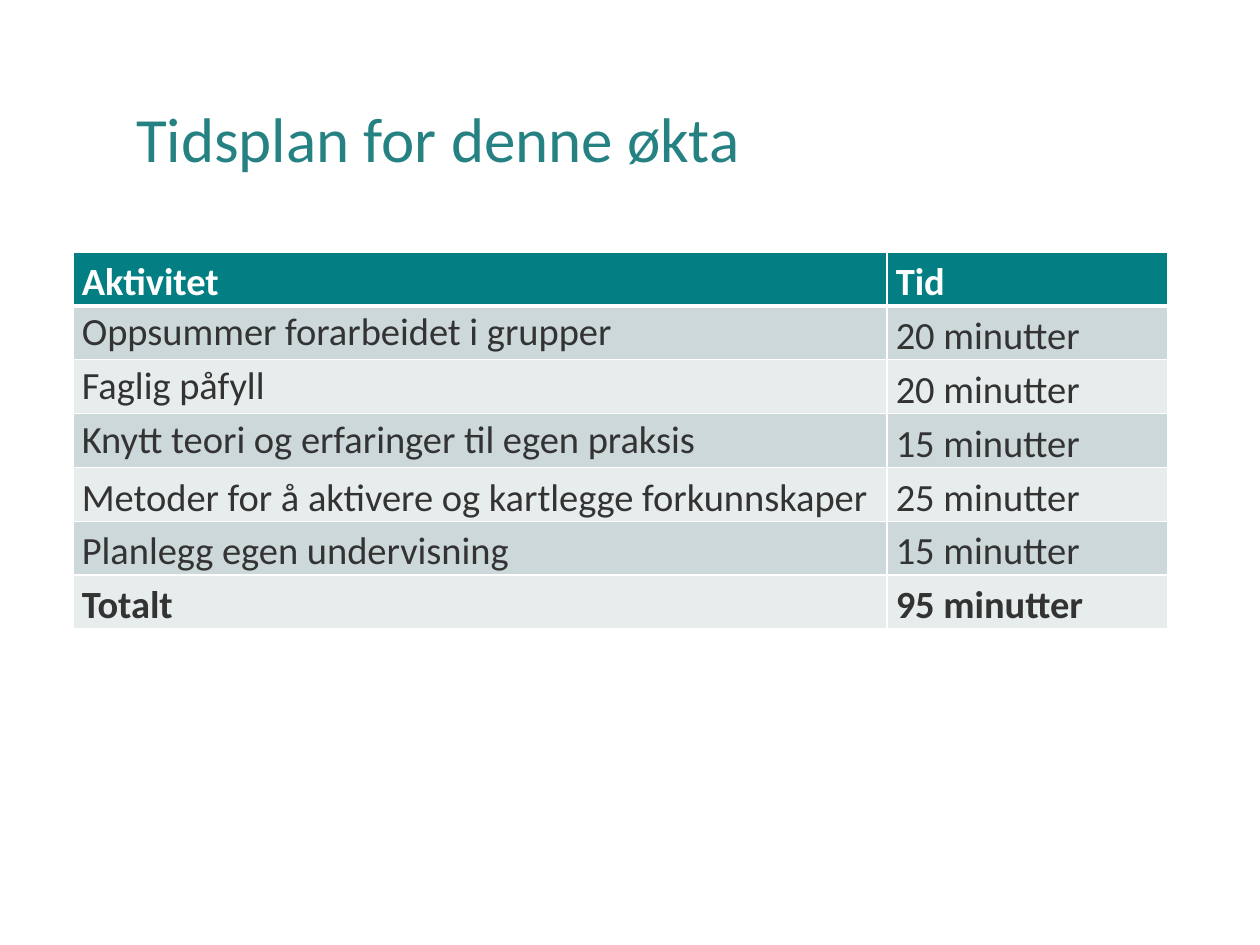
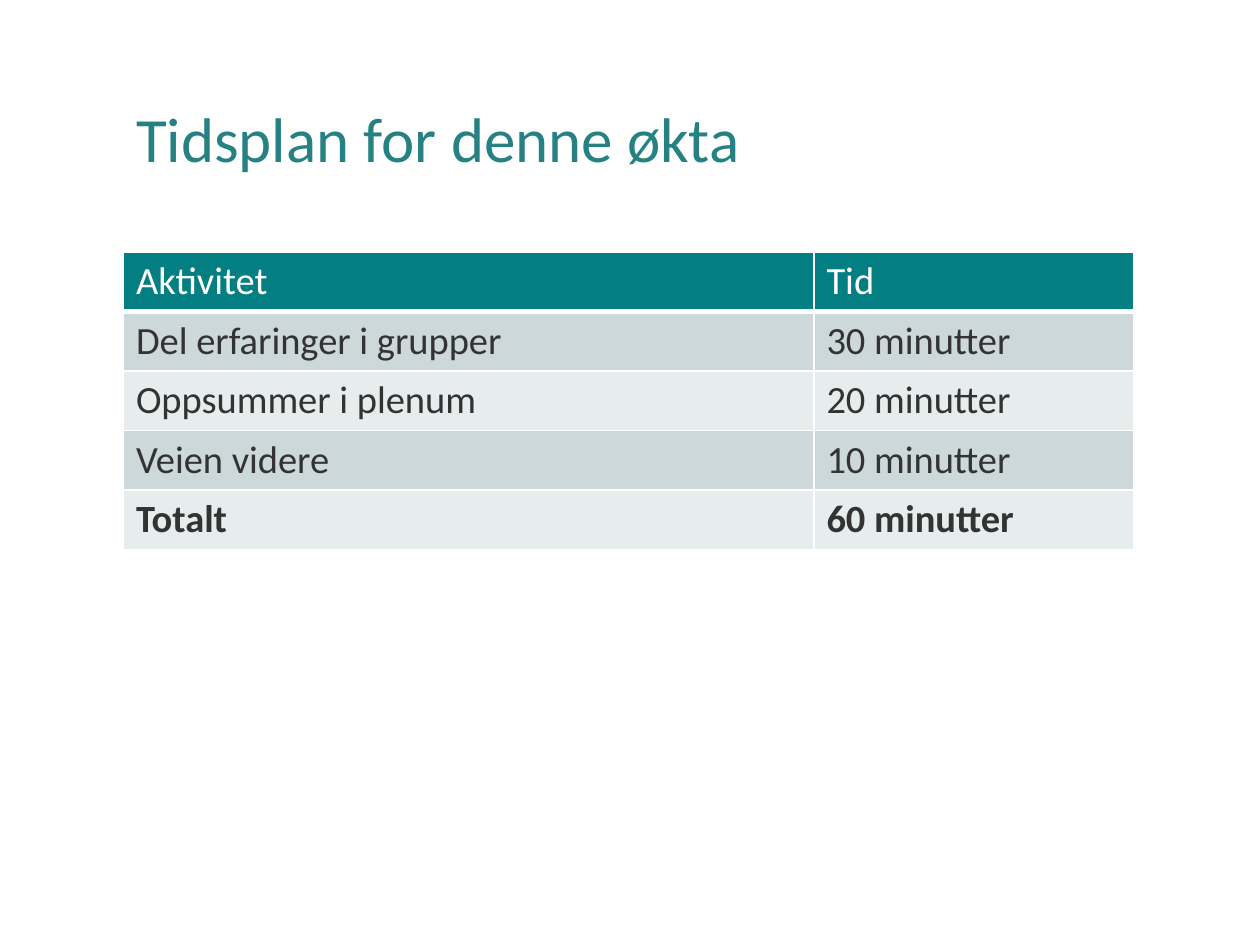
import pptx
import pptx.util
import pptx.dml.color
import pptx.enum.text
import pptx.oxml
import pptx.oxml.ns

Inches = pptx.util.Inches
Pt = pptx.util.Pt
RGBColor = pptx.dml.color.RGBColor

TEAL = RGBColor(0x26, 0x81, 0x83)
HEAD = RGBColor(0x03, 0x7F, 0x83)
DARK = RGBColor(0xCC, 0xD8, 0xD9)
LIGHT = RGBColor(0xE7, 0xEC, 0xED)
INK = RGBColor(0x33, 0x33, 0x33)
WHITE = RGBColor(0xFF, 0xFF, 0xFF)
FONT = "Calibri"


def write(para, text, size, color, bold=False):
    run = para.add_run()
    run.text = text
    run.font.name = FONT
    run.font.size = Pt(size)
    run.font.color.rgb = color
    run.font.bold = bold


def edge(cell, side, width):
    cell._tc.get_or_add_tcPr().append(pptx.oxml.parse_xml(
        f'<a:ln{side} {pptx.oxml.ns.nsdecls("a")} w="{Pt(width)}">'
        f'<a:solidFill><a:srgbClr val="{WHITE}"/></a:solidFill></a:ln{side}>'))


plans = [
    dict(left=0.58, cols=(6.46, 2.23), pad=(0.07, 0), space=1.15,
         tight=(1, 2, 3), bold=True, rows=[
             ("Aktivitet", "Tid"),
             ("Oppsummer forarbeidet i grupper", "20 minutter"),
             ("Faglig påfyll", "20 minutter"),
             ("Knytt teori og erfaringer til egen praksis", "15 minutter"),
             ("Metoder for å aktivere og kartlegge forkunnskaper", "25 minutter"),
             ("Planlegg egen undervisning", "15 minutter"),
             ("Totalt", "95 minutter")]),
    dict(left=0.98, cols=(5.48, 2.54), pad=(0.1, 0.05), space=1.0,
         tight=(), bold=False, rows=[
             ("Aktivitet", "Tid"),
             ("Del erfaringer i grupper", "30 minutter"),
             ("Oppsummer i plenum", "20 minutter"),
             ("Veien videre", "10 minutter"),
             ("Totalt", "60 minutter")]),
]

deck = pptx.Presentation()
deck.slide_width = Inches(10)
deck.slide_height = Inches(7.5)

for plan in plans:
    slide = deck.slides.add_slide(deck.slide_layouts[5])
    slide.background.fill.solid()
    slide.background.fill.fore_color.rgb = WHITE

    title = slide.shapes.title
    title.left, title.top = Inches(0.98), Inches(0.4)
    title.width, title.height = Inches(8.29), Inches(1.45)
    title.text_frame.vertical_anchor = pptx.enum.text.MSO_ANCHOR.MIDDLE
    para = title.text_frame.paragraphs[0]
    para.alignment = pptx.enum.text.PP_ALIGN.LEFT
    para.line_spacing = 0.9
    write(para, "Tidsplan for denne økta", 36, TEAL)

    rows, cols = plan["rows"], plan["cols"]
    last = len(rows) - 1
    table = slide.shapes.add_table(
        len(rows), len(cols), Inches(plan["left"]), Inches(2),
        Inches(sum(cols)), Inches(0.41 * len(rows))).table
    for col, width in zip(table.columns, cols):
        col.width = Inches(width)

    for r, texts in enumerate(rows):
        table.rows[r].height = Inches(0.41)
        for c, text in enumerate(texts):
            cell = table.cell(r, c)
            side, end = plan["pad"]
            cell.margin_left = cell.margin_right = Inches(side)
            cell.margin_top = cell.margin_bottom = Inches(end)
            edge(cell, "L", 1)
            edge(cell, "R", 1)
            edge(cell, "T", 3 if r == 1 else 1)
            edge(cell, "B", 3 if r == 0 else 1)
            cell.fill.solid()
            cell.fill.fore_color.rgb = HEAD if r == 0 else DARK if r % 2 else LIGHT
            para = cell.text_frame.paragraphs[0]
            tight = c == 0 and r in plan["tight"]
            para.line_spacing = 1.07 if tight else plan["space"]
            bold = r == last or (r == 0 and plan["bold"])
            write(para, text, 22, WHITE if r == 0 else INK, bold)

deck.save("out.pptx")
